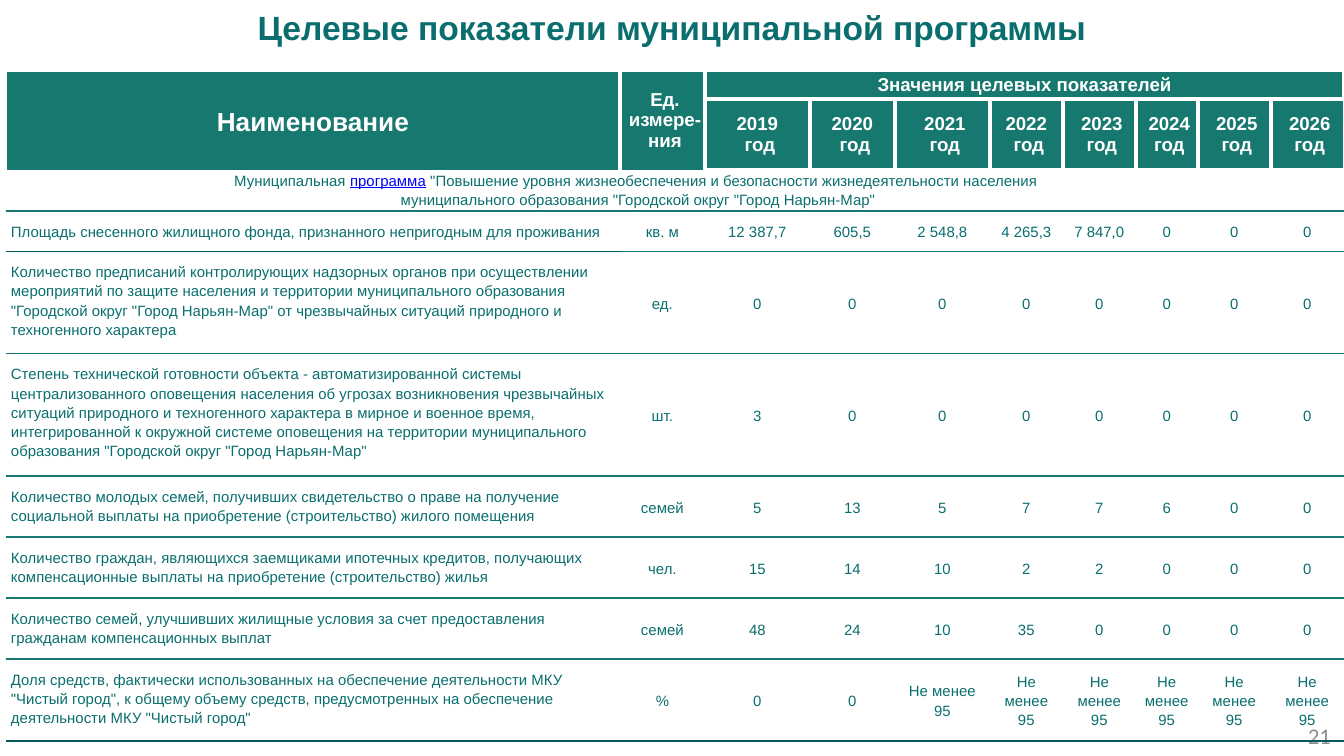
from dataclasses import dataclass
from itertools import product
from typing import NamedTuple

from lxml.etree import SubElement as Sub
from pptx import Presentation
from pptx.dml.color import RGBColor as RGB
from pptx.enum.text import MSO_ANCHOR as Anchor, PP_ALIGN as Align
from pptx.oxml.ns import qn
from pptx.util import Emu, Pt

SCALE = 914400 / 134.4  # EMU in one px


@dataclass(frozen=True)
class Theme:
    font: str = "Arial"
    page_font: str = "Calibri"
    ink: str = "0A6E6E"
    fill: str = "16786E"
    dark: str = "055A5A"
    white: str = "FFFFFF"
    link: str = "0000FF"
    gray: str = "8C8C8C"
    title: int = 18
    name: int = 14
    head: int = 10
    page: int = 12
    body: int = 8
    thin: float = 1
    thick: float = 2.25
    lead: float = 1.15


T = Theme()


class Run(NamedTuple):
    text: str
    size: int = T.body
    color: str = T.ink
    bold: bool = False
    line: bool = False
    font: str = T.font


class Edge(NamedTuple):
    side: str
    color: str
    width: float


class Look(NamedTuple):
    pad: tuple[int, int]
    align: Align = Align.CENTER
    anchor: Anchor = Anchor.MIDDLE
    lead: float = T.lead
    indent: int = 0
    fill: str = ""


class Row(NamedTuple):
    height: int
    name: str
    unit: str
    vals: tuple[str, ...]


HEAD = Look((1, 1), fill=T.fill)
YEAR = HEAD._replace(lead=1, indent=5)
BAND = Look((5, 0), anchor=Anchor.TOP)
NAME = Look((5, 10), Align.LEFT, Anchor.TOP)
UNIT = Look((5, 5))
VALUE = Look((5, 10))

COLS = (614, 85, 105, 85, 95, 73, 73, 62, 73, 73)
TOPS = (28, 71, 40)
YEARS = (("2019 ", "год"), ("2020 ", "год"), ("2021", "год"), ("2022 ", "год"),
         ("2023 год",), ("2024 год",), ("2025 год",), ("2026 год",))
LEAST = "Не менее 95"
ROWS = (
    Row(40, "Площадь снесенного жилищного фонда, признанного непригодным для проживания",
        "кв. м", ("12 387,7", "605,5", "2 548,8", "4 265,3", "7 847,0", "0", "0", "0")),
    Row(101, "Количество предписаний контролирующих надзорных органов при осуществлении "
        "мероприятий по защите населения и территории муниципального образования "
        "\"Городской округ \"Город Нарьян-Мар\" от чрезвычайных ситуаций природного и "
        "техногенного характера", "ед.", ("0",) * 8),
    Row(122, "Степень технической готовности объекта - автоматизированной системы "
        "централизованного оповещения населения об угрозах возникновения чрезвычайных "
        "ситуаций природного и техногенного характера в мирное и военное время, "
        "интегрированной к окружной системе оповещения на территории муниципального "
        "образования \"Городской округ \"Город Нарьян-Мар\"", "шт.", ("3",) + ("0",) * 7),
    Row(60, "Количество молодых семей, получивших свидетельство о праве на получение "
        "социальной выплаты на приобретение (строительство) жилого помещения",
        "семей", ("5", "13", "5", "7", "7", "6", "0", "0")),
    Row(60, "Количество граждан, являющихся заемщиками ипотечных кредитов, получающих "
        "компенсационные выплаты на приобретение (строительство) жилья",
        "чел.", ("15", "14", "10", "2", "2", "0", "0", "0")),
    Row(60, "Количество семей, улучшивших жилищные условия за счет предоставления "
        "гражданам компенсационных выплат",
        "семей", ("48", "24", "10", "35", "0", "0", "0", "0")),
    Row(81, "Доля средств, фактически использованных на обеспечение деятельности МКУ "
        "\"Чистый город\", к общему объему средств, предусмотренных на обеспечение "
        "деятельности МКУ \"Чистый город\"", "%", ("0", "0") + (LEAST,) * 6),
)


def px(n: int) -> Emu:
    return Emu(round(n * SCALE))


def write(frame, paras: list[list[Run]], align: Align, lead: float = 1,
          indent: int = 0) -> None:
    for i, runs in enumerate(paras):
        para = frame.paragraphs[0] if i == 0 else frame.add_paragraph()
        para.alignment, para.line_spacing = align, lead
        if indent:
            para._p.get_or_add_pPr().set("marL", str(px(indent)))
        for item in runs:
            run = para.add_run()
            run.text = item.text
            font = run.font
            font.name, font.size, font.bold = item.font, Pt(item.size), item.bold
            font.underline = item.line
            font.color.rgb = RGB.from_string(item.color)


def rule(cell, edges: list[Edge]) -> None:
    """Add cell borders; the schema wants the order L, R, T, B."""
    props = cell._tc.get_or_add_tcPr()
    for edge in sorted(edges, key=lambda e: "LRTB".index(e.side)):
        line = Sub(props, qn(f"a:ln{edge.side}"), w=str(Pt(edge.width)))
        Sub(Sub(line, qn("a:solidFill")), qn("a:srgbClr"), val=edge.color)


def put(cell, paras: list[list[Run]], look: Look) -> None:
    cell.margin_left = cell.margin_right = px(look.pad[0])
    cell.margin_top = cell.margin_bottom = px(look.pad[1])
    cell.vertical_anchor = look.anchor
    write(cell.text_frame, paras, look.align, look.lead, look.indent)


def paint(cell, color: str) -> None:
    if color:
        cell.fill.solid()
        cell.fill.fore_color.rgb = RGB.from_string(color)
    else:
        cell.fill.background()


def draw_table(slide) -> None:
    sizes = TOPS + tuple(row.height for row in ROWS)
    frame = slide.shapes.add_table(len(sizes), len(COLS), px(6), px(71),
                                   px(sum(COLS)), px(sum(sizes)))
    table = frame.table
    table.first_row = table.horz_banding = False
    style = table._tbl.tblPr.find(qn("a:tableStyleId"))
    style.text = "{2D5ABB26-0587-4C30-8999-92F81FD0307C}"  # no style, no grid
    for col, width in zip(table.columns, COLS):
        col.width = px(width)
    for row, height in zip(table.rows, sizes):
        row.height = px(height)

    # Spans
    for a, b in (((0, 0), (1, 0)), ((0, 1), (1, 1)), ((0, 2), (0, 9)), ((2, 0), (2, 8))):
        table.cell(*a).merge(table.cell(*b))

    # Header
    def bold(text: str, size: int = T.head) -> list[Run]:
        return [Run(text, size, T.white, True)]

    put(table.cell(0, 0), [bold("Наименование", T.name)], HEAD)
    put(table.cell(0, 1), [bold("Ед. измере-ния")], YEAR)
    put(table.cell(0, 2), [bold("Значения целевых показателей")],
        HEAD._replace(anchor=Anchor.TOP))
    for c, lines in enumerate(YEARS, 2):
        put(table.cell(1, c), [bold(line) for line in lines], YEAR)

    # Programme band
    put(table.cell(2, 0), [
        [Run("Муниципальная "), Run("программа", color=T.link, line=True),
         Run(" \"Повышение уровня жизнеобеспечения и безопасности "
             "жизнедеятельности населения ")],
        [Run("муниципального образования \"Городской округ \"Город Нарьян-Мар\"")]], BAND)

    # Indicators
    for r, row in enumerate(ROWS, len(TOPS)):
        looks = (NAME, UNIT) + (VALUE,) * len(row.vals)
        for c, (text, look) in enumerate(zip((row.name, row.unit) + row.vals, looks)):
            put(table.cell(r, c), [[Run(text)]], look)

    # Borders, fills and the type size of blank cells
    last = len(sizes) - 1
    for r, c in product(range(len(sizes)), range(len(COLS))):
        cell = table.cell(r, c)
        if r < 2:
            rule(cell, [Edge("L", T.white, T.thick if c else T.thin),
                        Edge("R", T.white, T.thick if c < 9 else T.thin),
                        Edge("T", T.white, T.thick if r else T.thin)]
                 + ([Edge("B", T.white, T.thick)] if r == 0 and c > 1 else []))
        else:
            dark = r == last or (r, c) == (3, 0)
            rule(cell, [Edge("B", T.dark if dark else T.fill, T.thin)])
        paint(cell, HEAD.fill if r < 2 else "")
        if not cell.text_frame.text:
            put(cell, [[]], BAND)
            Sub(cell.text_frame.paragraphs[0]._p, qn("a:endParaRPr"), sz=str(T.body * 100))


def main() -> None:
    deck = Presentation()
    deck.slide_width, deck.slide_height = px(1344), px(756)
    slide = deck.slides.add_slide(deck.slide_layouts[5])

    # Title
    title = slide.shapes.title
    title.left, title.top, title.width, title.height = px(0), px(0), px(1344), px(54)
    title.text_frame.vertical_anchor = Anchor.MIDDLE
    write(title.text_frame, [[Run("Целевые показатели муниципальной программы",
                                  T.title, bold=True)]], Align.CENTER)

    # Page number
    page = slide.shapes.add_textbox(px(1031), px(716), px(313), px(40)).text_frame
    page.word_wrap, page.vertical_anchor = True, Anchor.MIDDLE
    write(page, [[Run("21", T.page, T.gray, font=T.page_font)]], Align.RIGHT)

    draw_table(slide)
    deck.save("out.pptx")


if __name__ == "__main__":
    main()
